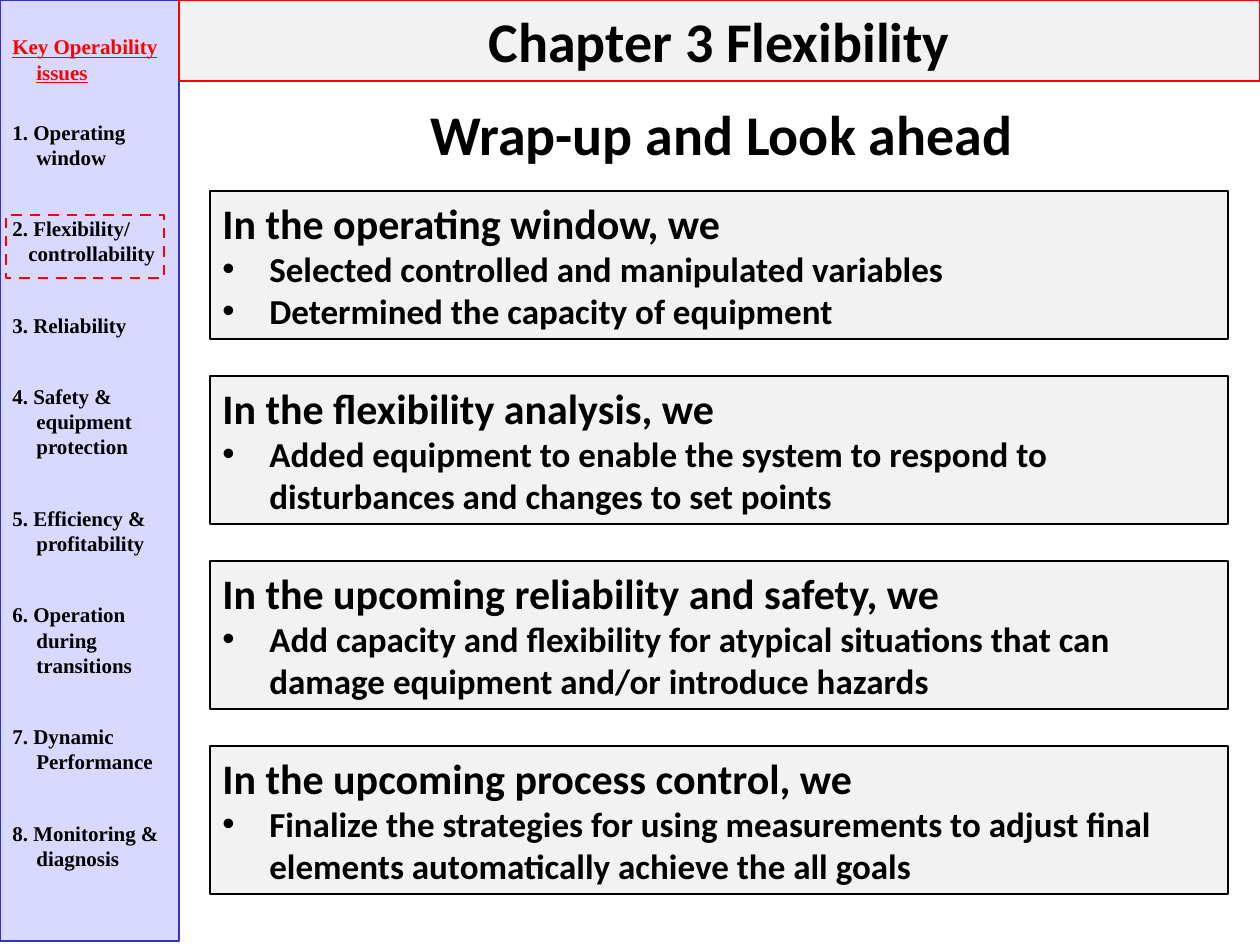
from lxml.etree import SubElement
from pptx import Presentation
from pptx.dml.color import RGBColor
from pptx.enum.dml import MSO_LINE
from pptx.enum.shapes import MSO_SHAPE
from pptx.enum.text import MSO_ANCHOR, MSO_AUTO_SIZE, PP_ALIGN
from pptx.oxml.ns import qn
from pptx.util import Inches, Pt

BLACK = RGBColor(0x00, 0x00, 0x00)
RED = RGBColor(0xFF, 0x00, 0x00)
BLUE = RGBColor(0x33, 0x33, 0xCC)
LAVENDER = RGBColor(0xD9, 0xD9, 0xFF)
GREY = RGBColor(0xF2, 0xF2, 0xF2)

SANS, SERIF = "Calibri", "Times New Roman"
PX = 914400 / 126

ISSUES = [
    "1. Operating window",
    "2. Flexibility/",
    "controllability",
    "3. Reliability",
    "4. Safety & equipment protection",
    "5. Efficiency & profitability",
    "6. Operation during transitions",
    "7. Dynamic Performance",
    "8. Monitoring & diagnosis",
]

SUMMARIES = [
    ("In the operating window, we",
     ["Selected controlled and manipulated variables",
      "Determined the capacity of equipment"]),
    ("In the flexibility analysis, we",
     ["Added equipment to enable the system to respond to "
      "disturbances and changes to set points"]),
    ("In the upcoming reliability and safety, we",
     ["Add capacity and flexibility for atypical situations that can "
      "damage equipment and/or introduce hazards"]),
    ("In the upcoming process control, we",
     ["Finalize the strategies for using measurements to adjust final "
      "elements automatically achieve the all goals"]),
]


def px(n):
    return round(n * PX)


class SlideBuilder:
    """Holds the slide and the shared look of its elements."""

    def __init__(self, slide):
        self.slide = slide

    def place(self, sp, box):
        sp.left, sp.top, sp.width, sp.height = map(px, box)

    def paint(self, sp, fill, line, weight=0.75):
        if fill is None:
            sp.fill.background()
        else:
            sp.fill.solid()
            sp.fill.fore_color.rgb = fill
        sp.line.color.rgb = line
        sp.line.width = Pt(weight)

    def rect(self, box, fill, line, weight=0.75):
        sp = self.slide.shapes.add_shape(MSO_SHAPE.RECTANGLE, *map(px, box))
        sp.shadow.inherit = False
        self.paint(sp, fill, line, weight)
        return sp

    def frame(self, sp, anchor=MSO_ANCHOR.TOP):
        tf = sp.text_frame
        tf.word_wrap = True
        tf.auto_size = MSO_AUTO_SIZE.NONE
        tf.vertical_anchor = anchor
        return tf

    def para(self, tf, text, size, font=SANS, color=BLACK, align=PP_ALIGN.LEFT):
        """Fill the empty first paragraph, or add another one."""
        p = tf.paragraphs[-1]
        if p.runs:
            p = tf.add_paragraph()
        p.alignment = align
        r = p.add_run()
        r.text = text
        r.font.size, r.font.name, r.font.bold = Pt(size), font, True
        r.font.color.rgb = color
        return p

    def indent(self, p, left, first):
        pPr = p._p.get_or_add_pPr()
        pPr.set("marL", str(px(left)))
        pPr.set("indent", str(px(first)))
        return pPr

    def heading(self, sp):
        return self.frame(sp, MSO_ANCHOR.MIDDLE)

    def title(self, text, box):
        sp = self.slide.shapes.title
        sp._element.getparent().append(sp._element)  # in front of the sidebar
        self.place(sp, box)
        self.paint(sp, GREY, RED)
        self.para(self.heading(sp), text, 32, align=PP_ALIGN.CENTER)

    def subtitle(self, text, box):
        sp = self.slide.shapes.add_textbox(*map(px, box))
        self.para(self.heading(sp), text, 32, align=PP_ALIGN.CENTER)

    def sidebar(self, heading, issues, box):
        tf = self.frame(self.rect(box, LAVENDER, BLUE))
        tf.margin_top = px(34)
        p = self.para(tf, heading, 12, SERIF, RED)
        p.runs[0].font.underline = True
        paragraphs = [p] + [self.para(tf, t, 12, SERIF) for t in issues]
        for i, p in enumerate(paragraphs):
            p.line_spacing = Pt(14.4)
            if p.runs[0].text[0].islower():  # continues the issue above
                self.indent(p, 16, 0)
                p.space_before = Pt(0)
            else:
                self.indent(p, 24, -24)
                p.space_before = Pt(19.8 if i == 1 else 26.4)

    def marker(self, box):
        self.rect(box, None, RED, 1.5).line.dash_style = MSO_LINE.DASH

    def summary(self, heading, points, box):
        tf = self.frame(self.rect(box, GREY, BLACK))
        self.para(tf, heading, 24)
        for point in points:
            pPr = self.indent(self.para(tf, point, 20), 47, -47)
            SubElement(pPr, qn("a:buFont"), typeface="Arial")
            SubElement(pPr, qn("a:buChar"), char="•")


def main():
    prs = Presentation()
    prs.slide_width, prs.slide_height = Inches(10), Inches(7.5)
    s = SlideBuilder(prs.slides.add_slide(prs.slide_layouts[5]))

    s.sidebar("Key Operability issues", ISSUES, (0, 0, 179, 941))
    s.marker((6, 215, 158, 63))
    s.title("Chapter 3 Flexibility", (179, 0, 1081, 81))
    s.subtitle("Wrap-up and Look ahead", (181, 93, 1081, 81))
    for i, (heading, points) in enumerate(SUMMARIES):
        s.summary(heading, points, (210, 191 + 185 * i, 1018, 148))

    prs.save("out.pptx")


if __name__ == "__main__":
    main()
